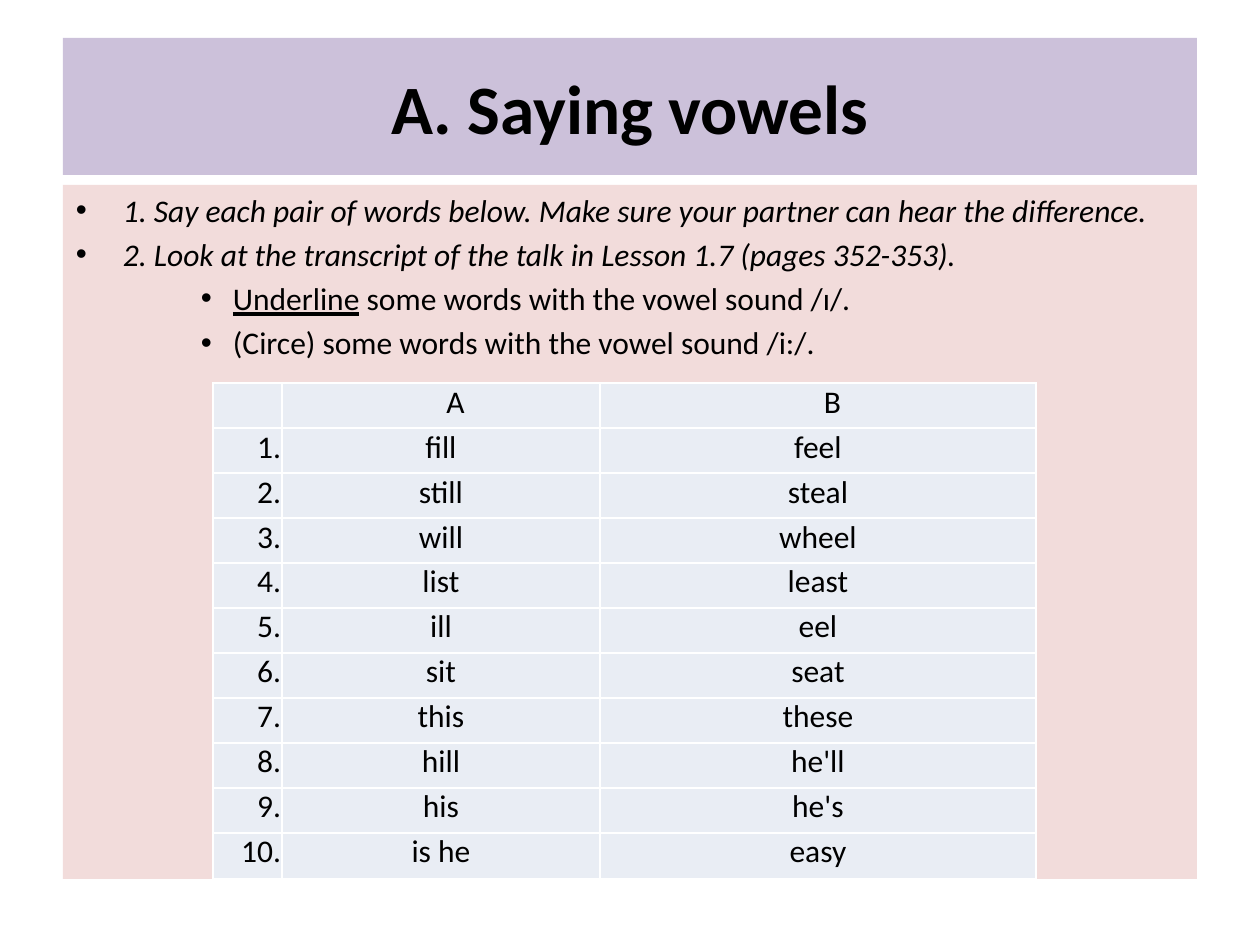
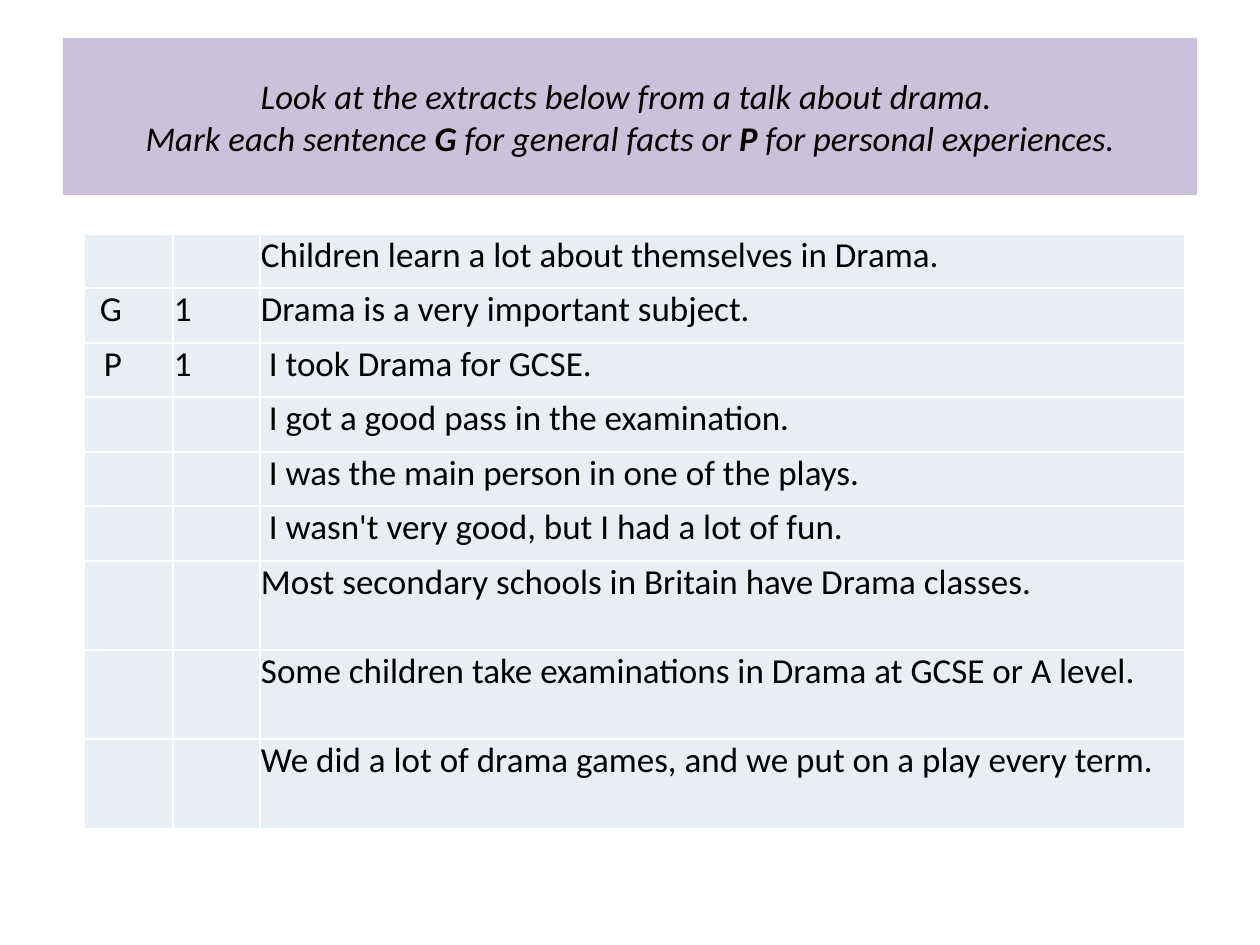
"""Build two pronunciation and drama lesson slides."""
import lxml.etree
import pptx
import pptx.dml.color
import pptx.enum.shapes
import pptx.enum.text
import pptx.oxml.ns
import pptx.util

PX = 7257
BLACK, WHITE, LILAC, ROSE, PALE = "000000", "FFFFFF", "CCC1DA", "F2DCDB", "E9EDF4"
LEFT, CENTER, RIGHT = (
    pptx.enum.text.PP_ALIGN.LEFT,
    pptx.enum.text.PP_ALIGN.CENTER,
    pptx.enum.text.PP_ALIGN.RIGHT,
)
TOP, MIDDLE = pptx.enum.text.MSO_ANCHOR.TOP, pptx.enum.text.MSO_ANCHOR.MIDDLE
qn = pptx.oxml.ns.qn


def paint(fill, color):
    fill.solid()
    fill.fore_color.rgb = pptx.dml.color.RGBColor.from_string(color)


def write(paragraph, runs, size, alignment, margin=0, indent=0):
    paragraph.alignment = alignment
    properties = paragraph._p.get_or_add_pPr()
    properties.set("marL", str(margin * PX))
    properties.set("indent", str(indent * PX))
    for text, formats in runs:
        for index, line in enumerate(text.split("\n")):
            if index:
                paragraph.add_line_break()
            run = paragraph.add_run()
            run.text = line
            values = {"name": "Calibri", "size": pptx.util.Pt(size), **formats}
            for name, value in values.items():
                setattr(run.font, name, value)
            paint(run.font.fill, BLACK)


italic = {"italic": True}
bold_italic = {"italic": True, "bold": True}
vowel_title = [("A. Saying vowels", {"bold": True})]
drama_title = [
    ("Look at the extracts below from a talk about drama. \nMark each sentence ", italic),
    ("G ", bold_italic),
    ("for general facts or ", italic),
    ("Ρ", bold_italic),
    (" for personal experiences.", italic),
]
step, detail = (47, -47), (157, -32)
instructions = [
    ([("1. Say each pair of words below. Make sure your partner can hear the difference.", italic)], step),
    ([("2. Look at the transcript of the talk in Lesson 1.7 (pages 352-353).", italic)], step),
    ([("Underline", {"underline": True}), (" some words with the vowel sound /ɪ/.", {})], detail),
    ([("(Circe) some words with the vowel sound /i:/.", {})], detail),
]

word_pairs = [
    ("fill", "feel"), ("still", "steal"), ("will", "wheel"), ("list", "least"), ("ill", "eel"),
    ("sit", "seat"), ("this", "these"), ("hill", "he'll"), ("his", "he's"), ("is he", "easy"),
]
vowel_rows = [[("", RIGHT, 0), ("A", CENTER, 29), ("Β", CENTER, 29)]]
for number, (short, long) in enumerate(word_pairs, 1):
    vowel_rows.append([(f"{number}.", RIGHT, 0), (short, CENTER, 0), (long, CENTER, 0)])

extracts = [
    ("", "", "Children learn a lot about themselves in Drama."),
    ("G", "1", "Drama is a very important subject."),
    ("P", "1", "I took Drama for GCSE."),
    ("", "", "I got a good pass in the examination."),
    ("", "", "I was the main person in one of the plays."),
    ("", "", "I wasn't very good, but I had a lot of fun."),
    ("", "", "Most secondary schools in Britain have Drama classes."),
    ("", "", "Some children take examinations in Drama at GCSE or A level."),
    ("", "", "We did a lot of drama games, and we put on a play every term."),
]
drama_rows = []
for mark, count, sentence in extracts:
    mark_margin = 19 if mark == "P" else 15
    sentence_margin = 8 if sentence.startswith("I ") else 0
    drama_rows.append([(mark, LEFT, mark_margin), (count, LEFT, 0), (sentence, LEFT, sentence_margin)])

lessons = [
    {
        "title": vowel_title, "title_size": 39.6, "title_height": 137,
        "body": instructions, "rows": vowel_rows, "text_size": 18, "corner": (213, 383),
        "widths": [69, 318, 436], "heights": [45] * 10 + [46],
    },
    {
        "title": drama_title, "title_size": 19.8, "title_height": 157,
        "body": [], "rows": drama_rows, "text_size": 20, "corner": (84, 234),
        "widths": [89, 87, 925], "heights": [54, 55] * 3 + [89, 89, 90],
    },
]

presentation = pptx.Presentation()
presentation.slide_width = 1260 * PX
presentation.slide_height = 945 * PX

for lesson in lessons:
    slide = presentation.slides.add_slide(presentation.slide_layouts[6])

    panels = [(38, lesson["title_height"], LILAC, MIDDLE)]
    if lesson["body"]:
        panels.append((185, 694, ROSE, TOP))
    frames = []
    for top, height, color, anchor in panels:
        shape = slide.shapes.add_shape(
            pptx.enum.shapes.MSO_SHAPE.RECTANGLE, 63 * PX, top * PX, 1134 * PX, height * PX
        )
        shape.shadow.inherit = False
        shape.line.fill.background()
        paint(shape.fill, color)
        layout = {
            "word_wrap": True, "vertical_anchor": anchor, "margin_top": 6 * PX,
            "margin_bottom": 6 * PX, "margin_left": 13 * PX, "margin_right": 13 * PX,
        }
        for name, value in layout.items():
            setattr(shape.text_frame, name, value)
        frames.append(shape.text_frame)

    write(frames[0].paragraphs[0], lesson["title"], lesson["title_size"], CENTER)

    for index, (runs, (margin, indent)) in enumerate(lesson["body"]):
        paragraph = frames[1].add_paragraph() if index else frames[1].paragraphs[0]
        write(paragraph, runs, 18, LEFT, margin, indent)
        paragraph.space_before = pptx.util.Pt(3.6)
        properties = paragraph._p.get_or_add_pPr()
        lxml.etree.SubElement(properties, qn("a:buFont")).set("typeface", "Arial")
        lxml.etree.SubElement(properties, qn("a:buChar")).set("char", "•")

    rows, widths, heights = lesson["rows"], lesson["widths"], lesson["heights"]
    left, top = lesson["corner"]
    table = slide.shapes.add_table(
        len(rows), len(widths), left * PX, top * PX, sum(widths) * PX, sum(heights) * PX
    ).table
    table.first_row = False
    table.horz_banding = False
    for column, width in zip(table.columns, widths):
        column.width = width * PX
    for row, height, entries in zip(table.rows, heights, rows):
        row.height = height * PX
        for cell, (text, alignment, margin) in zip(row.cells, entries):
            insets = {"margin_left": PX, "margin_right": PX, "margin_top": 0, "margin_bottom": 0}
            for name, value in insets.items():
                setattr(cell, name, value)
            for side in ("lnL", "lnR", "lnT", "lnB"):
                border = lxml.etree.SubElement(cell._tc.get_or_add_tcPr(), qn(f"a:{side}"))
                border.set("w", str(pptx.util.Pt(1)))
                border_fill = lxml.etree.SubElement(border, qn("a:solidFill"))
                lxml.etree.SubElement(border_fill, qn("a:srgbClr")).set("val", WHITE)
            paint(cell.fill, PALE)
            if text:
                write(cell.text_frame.paragraphs[0], [(text, {})], lesson["text_size"], alignment, margin)

presentation.save("out.pptx")
